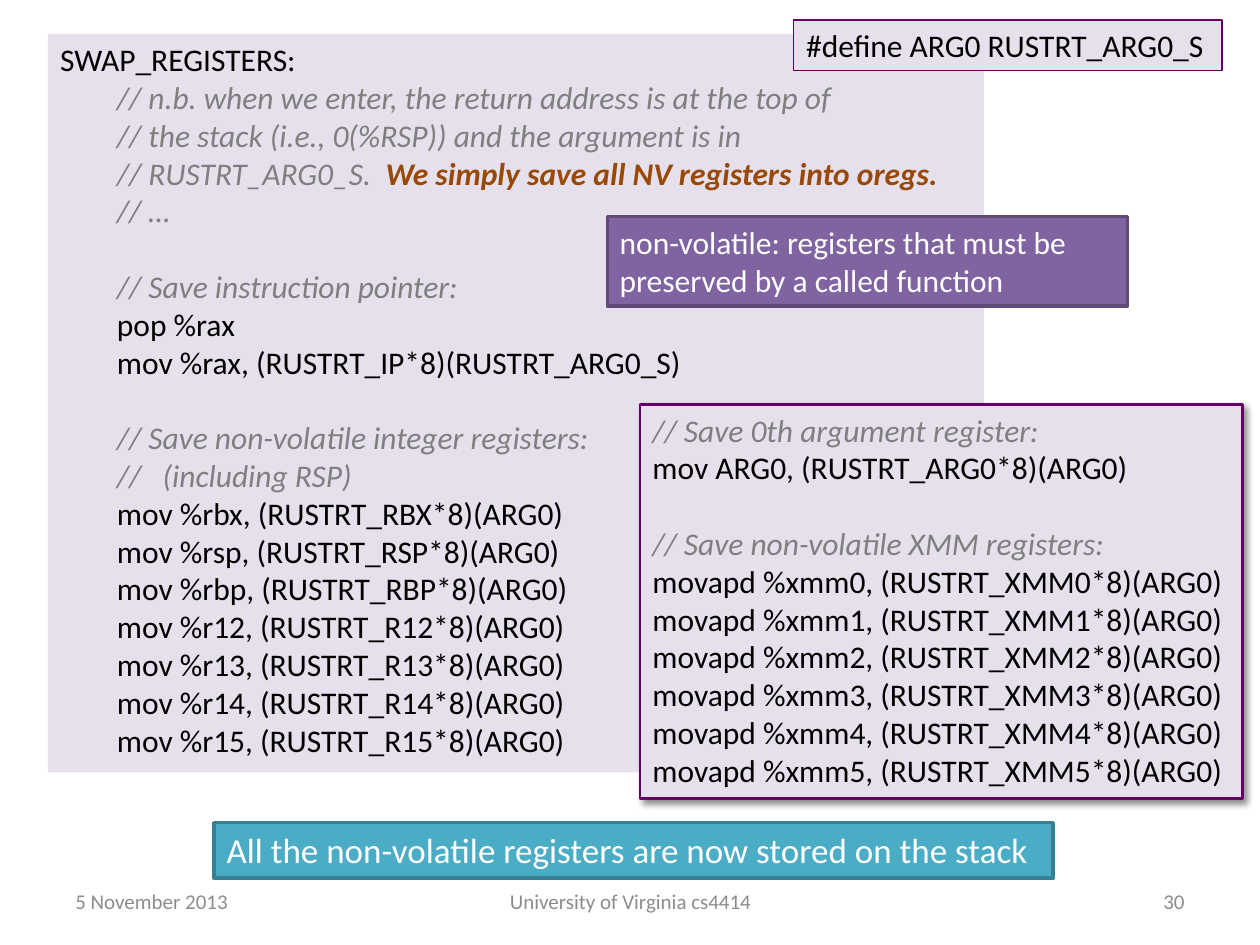
from lxml.etree import SubElement
from pptx import Presentation
from pptx.dml.color import RGBColor
from pptx.enum.shapes import MSO_SHAPE
from pptx.enum.text import MSO_ANCHOR, PP_ALIGN
from pptx.oxml.ns import qn
from pptx.util import Inches, Pt

BLACK = RGBColor(0x00, 0x00, 0x00)
WHITE = RGBColor(0xFF, 0xFF, 0xFF)
GRAY = RGBColor(0x7F, 0x7F, 0x7F)
FOOTER_GRAY = RGBColor(0x8C, 0x8C, 0x8C)
BROWN = RGBColor(0x98, 0x48, 0x07)
LAVENDER = RGBColor(0xE6, 0xE0, 0xEC)
PLUM = RGBColor(0x66, 0x00, 0x66)
PURPLE = RGBColor(0x80, 0x64, 0xA2)
DARK_PURPLE = RGBColor(0x5F, 0x4A, 0x78)
TEAL = RGBColor(0x4B, 0xAC, 0xC6)
DARK_TEAL = RGBColor(0x37, 0x7F, 0x92)

FONT = "Calibri"
CODE_INDENT = 0.45
BLANK_LINE = Pt(21.6)

# Each listing is a list of blocks; a blank line separates the blocks.
SWAP_LABEL = "SWAP_REGISTERS:"
EMPHASIS = "We simply save all NV registers into oregs."
SWAP_BLOCKS = [
    [
        SWAP_LABEL,
        "// n.b. when we enter, the return address is at the top of",
        "// the stack (i.e., 0(%RSP)) and the argument is in",
        "// RUSTRT_ARG0_S.  " + EMPHASIS,
        "// …",
    ],
    [
        "// Save instruction pointer:",
        "pop %rax",
        "mov %rax, (RUSTRT_IP*8)(RUSTRT_ARG0_S)",
    ],
    [
        "// Save non-volatile integer registers:",
        "//   (including RSP)",
        *(f"mov %{reg}, (RUSTRT_{reg.upper()}*8)(ARG0)"
          for reg in ("rbx", "rsp", "rbp", "r12", "r13", "r14", "r15")),
    ],
]
XMM_BLOCKS = [
    ["// Save 0th argument register:", "mov ARG0, (RUSTRT_ARG0*8)(ARG0)"],
    [
        "// Save non-volatile XMM registers:",
        *(f"movapd %xmm{i}, (RUSTRT_XMM{i}*8)(ARG0)" for i in range(6)),
    ],
]

# text, box, fill, line colour, line width, text size, text colour
CALLOUTS = [
    ("All the non-volatile registers are now stored on the stack",
     (1.7, 6.53, 6.66, 0.44), TEAL, DARK_TEAL, 2, 20, WHITE),
    ("#define ARG0 RUSTRT_ARG0_S",
     (6.3, 0.16, 3.4, 0.4), LAVENDER, PLUM, 0.75, 18, BLACK),
    ("non-volatile: registers that must be preserved by a called function",
     (4.82, 1.72, 4.13, 0.71), PURPLE, DARK_PURPLE, 2, 18, WHITE),
]
FOOTERS = [
    ("5 November 2013", 0.5, 2.33, PP_ALIGN.LEFT),
    ("University of Virginia cs4414", 3.42, 3.17, PP_ALIGN.CENTER),
    ("30", 7.17, 2.33, PP_ALIGN.RIGHT),
]


def add_run(p, text, size, color, bold=False, italic=False):
    r = p.add_run()
    r.text = text
    r.font.name = FONT
    r.font.size = Pt(size)
    r.font.color.rgb = color
    r.font.bold = bold
    r.font.italic = italic


def add_panel(slide, box, fill, line=None, width=0):
    s = slide.shapes.add_shape(MSO_SHAPE.RECTANGLE, *map(Inches, box))
    s.shadow.inherit = False
    s.fill.solid()
    s.fill.fore_color.rgb = fill
    if line is None:
        s.line.fill.background()
    else:
        s.line.color.rgb = line
        s.line.width = Pt(width)
    s.text_frame.word_wrap = True
    s.text_frame.vertical_anchor = MSO_ANCHOR.TOP
    s.text_frame.paragraphs[0].alignment = PP_ALIGN.LEFT
    return s


def add_code(tf, blocks, indent=0):
    """Write the code lines, with comments in gray italics and labels unindented."""
    p = tf.paragraphs[0]
    for b, block in enumerate(blocks):
        for i, line in enumerate(block):
            if b or i:
                p = tf.add_paragraph()
            p.alignment = PP_ALIGN.LEFT
            if b and i == 0:
                p.space_before = BLANK_LINE
            if indent and line != SWAP_LABEL:
                p._p.get_or_add_pPr().set("marL", str(Inches(indent)))
            comment = line.startswith("//")
            plain, emphasis, _ = line.partition(EMPHASIS)
            add_run(p, plain, 18, GRAY if comment else BLACK, italic=comment)
            if emphasis:
                add_run(p, emphasis, 18, BROWN, bold=True, italic=True)


def add_drop_shadow(s):
    effects = s._element.spPr.find(qn("a:effectLst"))
    shadow = SubElement(effects, qn("a:outerShdw"), blurRad=str(Pt(4)),
                        dist=str(Pt(3)), dir=str(45 * 60000), algn="tl")
    color = SubElement(shadow, qn("a:srgbClr"), val=str(BLACK))
    SubElement(color, qn("a:alpha"), val="43000")


prs = Presentation()
prs.slide_width, prs.slide_height = Inches(10), Inches(7.5)
slide = prs.slides.add_slide(prs.slide_layouts[6])

for text, left, width, align in FOOTERS:
    s = slide.shapes.add_textbox(*map(Inches, (left, 6.95, width, 0.4)))
    tf = s.text_frame
    tf.word_wrap = True
    tf.vertical_anchor = MSO_ANCHOR.MIDDLE
    tf.paragraphs[0].alignment = align
    add_run(tf.paragraphs[0], text, 12, FOOTER_GRAY)

swap_panel = add_panel(slide, (0.38, 0.27, 7.43, 5.86), LAVENDER)
add_code(swap_panel.text_frame, SWAP_BLOCKS, CODE_INDENT)

xmm_panel = add_panel(slide, (5.08, 3.21, 4.78, 3.13), LAVENDER, PLUM, 1.5)
add_drop_shadow(xmm_panel)
add_code(xmm_panel.text_frame, XMM_BLOCKS)

for text, box, fill, line, width, size, color in CALLOUTS:
    s = add_panel(slide, box, fill, line, width)
    add_run(s.text_frame.paragraphs[0], text, size, color)

prs.save("out.pptx")
